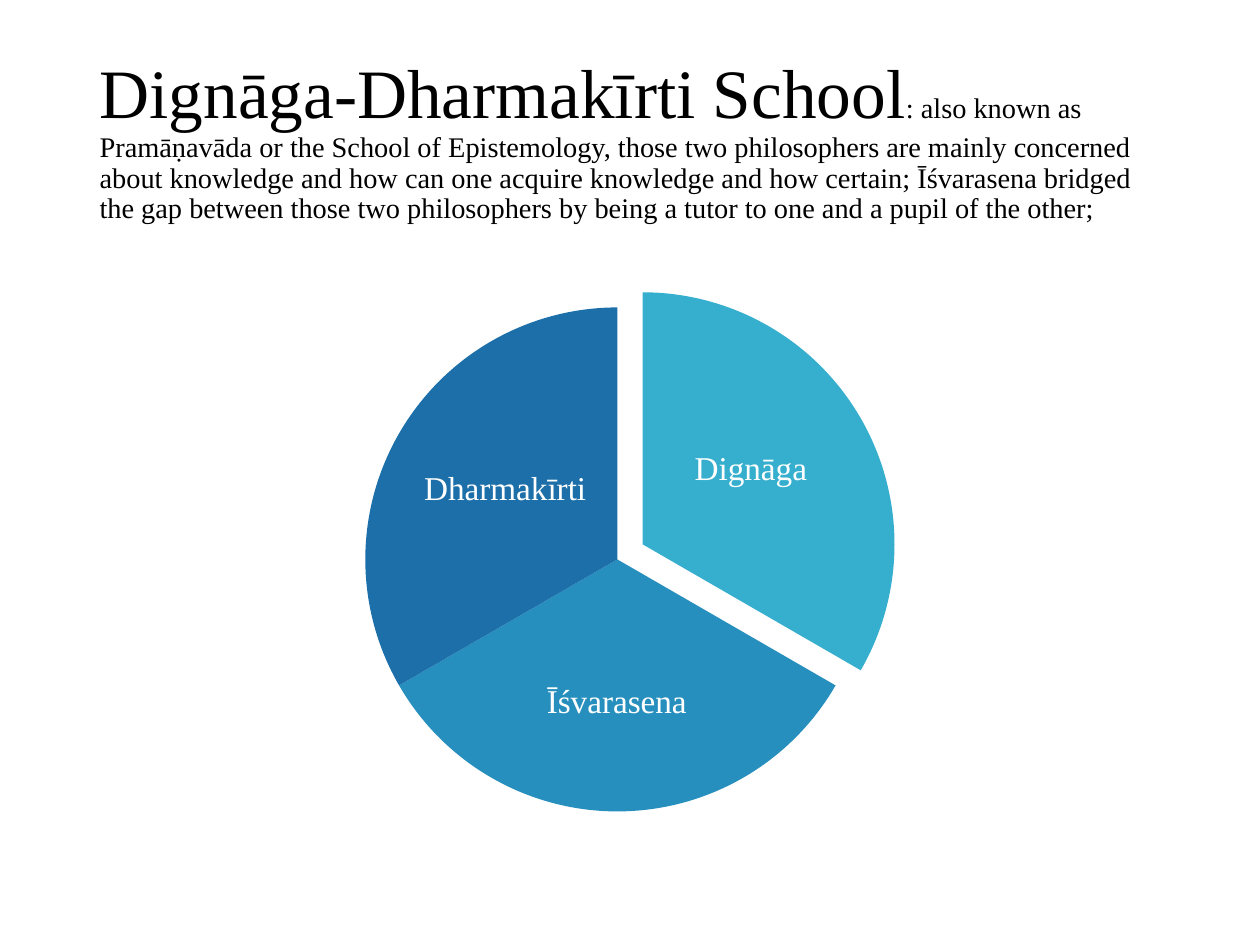
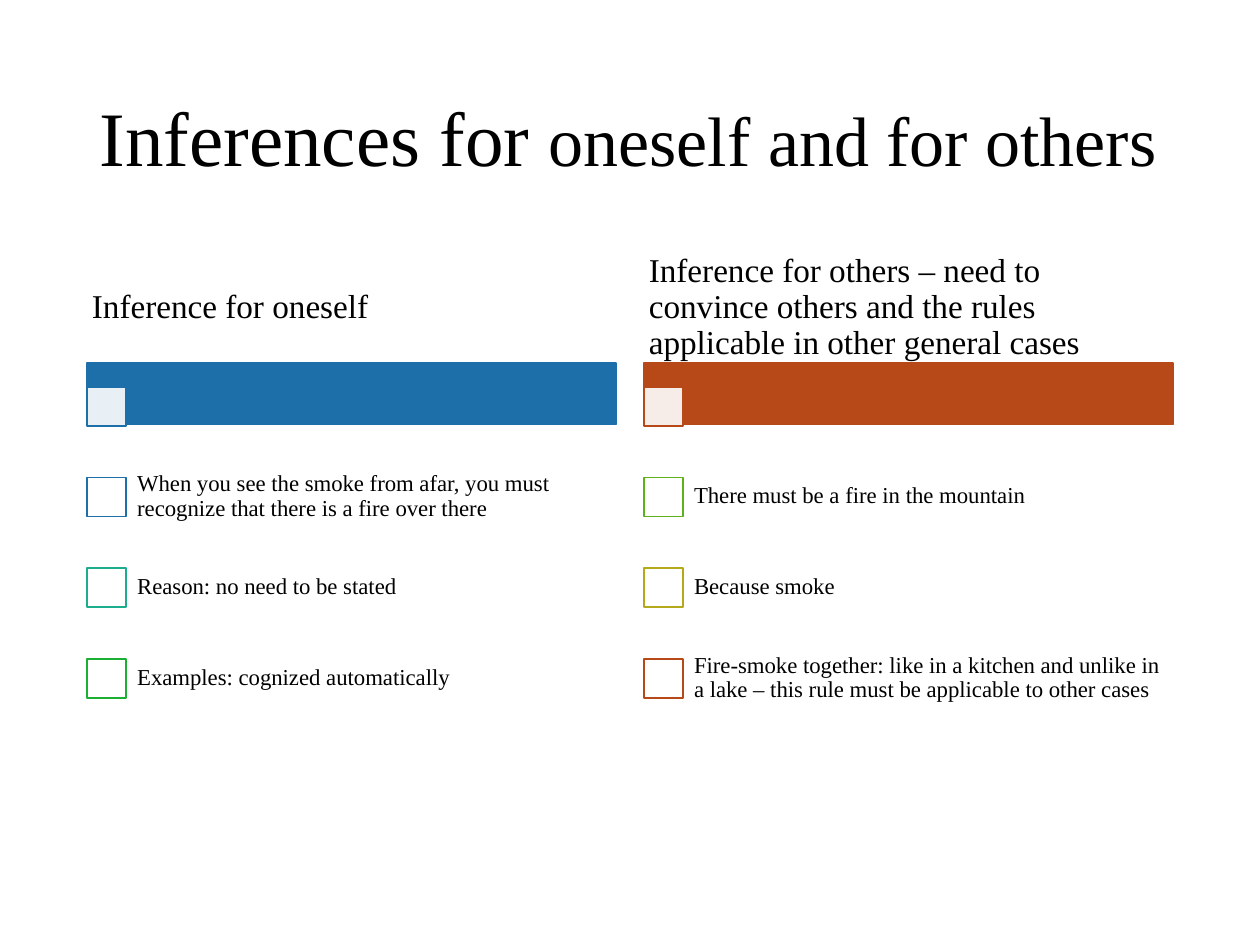
"""Build two slides on the Dignāga-Dharmakīrti school and its two kinds of inference."""
from lxml import etree
from pptx import Presentation
from pptx import util as u
from pptx.dml import color
from pptx.enum import shapes, text
from pptx.oxml import ns

PX = u.Inches(1) // 100
FONT = "Times New Roman"
BLACK, WHITE = "000000", "FFFFFF"
BLUE, RUST = "1D6FA9", "B74919"
TITLE_FRAME = (69, 40, 862, 145)


def draw(slide, kind, frame, fill, line=None):
    """Add a flat preset shape with an optional one-point outline."""
    shape = slide.shapes.add_shape(kind, *(n * PX for n in frame))
    shape.shadow.inherit = False
    shape.fill.solid()
    shape.fill.fore_color.rgb = color.RGBColor.from_string(fill)
    if line:
        shape.line.color.rgb = color.RGBColor.from_string(line)
        shape.line.width = u.Pt(1)
    else:
        shape.line.fill.background()
    return shape


def write(box, frame, spans, insets, ink=BLACK, align=text.PP_ALIGN.LEFT):
    """Place a text holder and fill it with (words, size) spans."""
    box.left, box.top, box.width, box.height = (n * PX for n in frame)
    body = box.text_frame
    body.word_wrap = True
    body.auto_size = text.MSO_AUTO_SIZE.NONE
    body.vertical_anchor = text.MSO_ANCHOR.MIDDLE
    body.margin_left = body.margin_right = insets[0] * PX
    body.margin_top = body.margin_bottom = insets[1] * PX
    para = body.paragraphs[0]
    para.alignment = align
    para.line_spacing = 0.9
    for words, size in spans:
        span = para.add_run()
        span.text = words
        span.font.name = FONT
        span.font.size = u.Pt(size)
        span.font.color.rgb = color.RGBColor.from_string(ink)


deck = Presentation()
deck.slide_width, deck.slide_height = 1000 * PX, 750 * PX

titles = [
    [("Dignāga-Dharmakīrti School", 39.6),
     (": also known as Pramāṇavāda or the School of Epistemology, those two "
      "philosophers are mainly concerned about knowledge and how can one acquire "
      "knowledge and how certain; Īśvarasena bridged the gap between those two "
      "philosophers by being a tutor to one and a pupil of the other;", 16.2)],
    [("Inferences for ", 44), ("oneself and for others", 40)],
]
pages = []
for spans in titles:
    page = deck.slides.add_slide(deck.slide_layouts[5])
    write(page.shapes.title, TITLE_FRAME, spans, (10, 5))
    pages.append(page)
school, inference = pages

slices = [
    ("Dignāga", "36AFCE", (310, 232), (162, 18), (528, 306, 136, 133)),
    ("Īśvarasena", "278FBE", (290, 244), (18, 90), (399, 496, 181, 124)),
    ("Dharmakīrti", BLUE, (290, 244), (90, 162), (333, 322, 136, 133)),
]
for name, fill, corner, angles, label in slices:
    wedge = draw(school, shapes.MSO_SHAPE.PIE, (*corner, 400, 400), fill)
    wedge.adjustments[0], wedge.adjustments[1] = angles
    write(school.shapes.add_textbox(0, 0, 0, 0), label, [(name, 19)], (3, 3),
          WHITE, text.PP_ALIGN.CENTER)

columns = [
    (69, BLUE, "Inference for oneself", [
        ("When you see the smoke from afar, you must recognize that there is a "
         "fire over there", BLUE),
        ("Reason: no need to be stated", "1CAC8E"),
        ("Examples: cognized automatically", "1BAF34")]),
    (511, RUST, "Inference for others – need to convince others and the rules "
     "applicable in other general cases", [
        ("There must be a fire in the mountain", "5FB11B"),
        ("Because smoke", "B4A91A"),
        ("Fire-smoke together: like in a kitchen and unlike in a lake – this rule "
         "must be applicable to other cases", RUST)]),
]
BOX, ROW = 31, 72
for left, accent, heading, points in columns:
    draw(inference, shapes.MSO_SHAPE.RECTANGLE, (left, 288, 420, 49), accent, accent)
    marker = draw(inference, shapes.MSO_SHAPE.RECTANGLE, (left, 307, BOX, BOX), WHITE, accent)
    tint = marker.fill._xPr.find(ns.qn("a:solidFill"))[0]
    etree.SubElement(tint, ns.qn("a:alpha"), val="90000")
    write(inference.shapes.add_textbox(0, 0, 0, 0), (left, 200, 420, 89),
          [(heading, 19)], (4, 3))
    for row, (words, outline) in enumerate(points):
        top = 358 + row * ROW
        draw(inference, shapes.MSO_SHAPE.RECTANGLE, (left, top + 21, BOX, BOX), WHITE, outline)
        write(inference.shapes.add_textbox(0, 0, 0, 0), (left + 30, top, 391, ROW),
              [(words, 13)], (10, 10))

deck.save("out.pptx")
